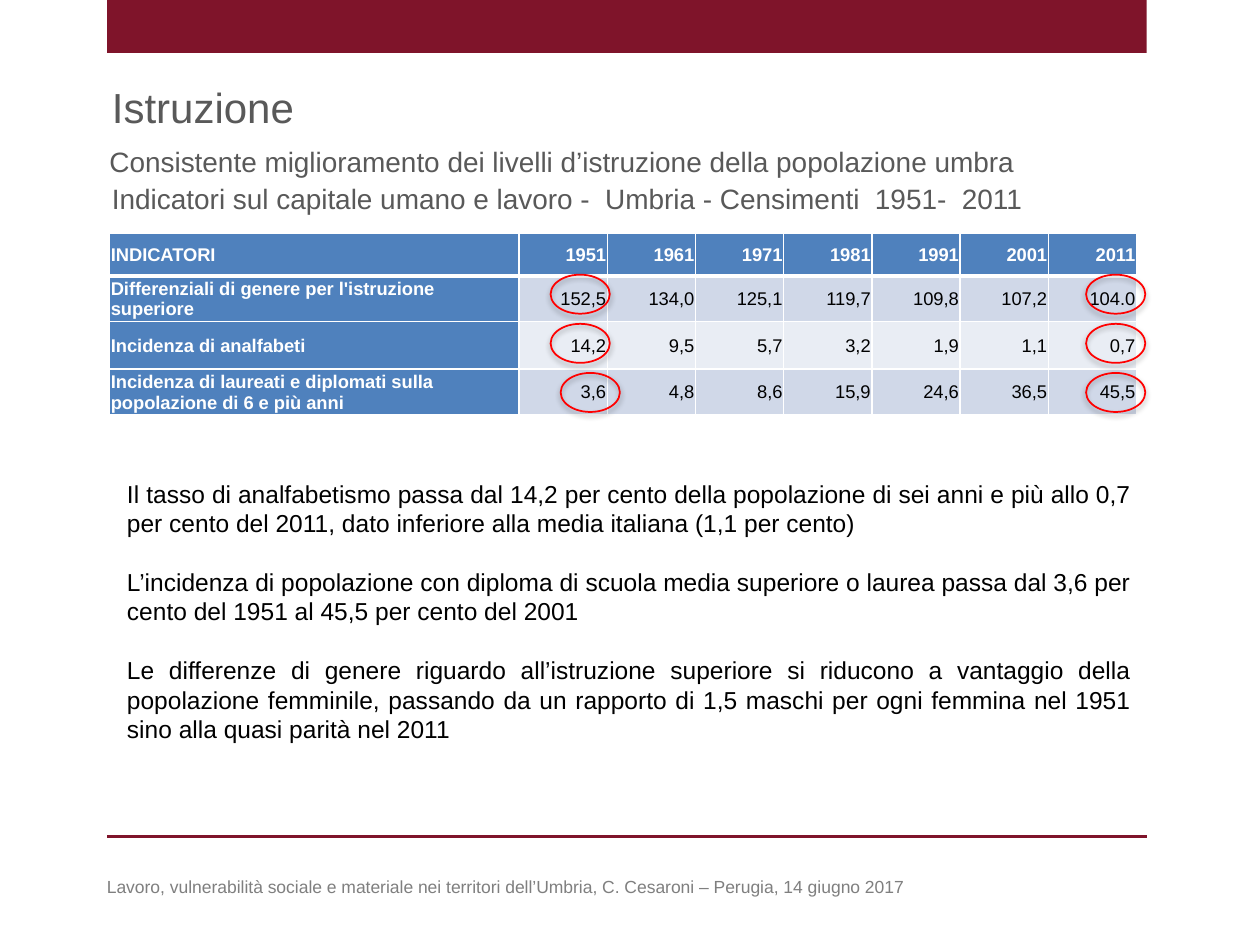
import pptx
import pptx.util
import pptx.dml.color
import pptx.enum.shapes
import pptx.enum.text
import pptx.oxml
import pptx.oxml.ns

Inches = pptx.util.Inches
Pt = pptx.util.Pt
ALIGN = pptx.enum.text.PP_ALIGN
SHAPE = pptx.enum.shapes.MSO_SHAPE

COLORS = {
    "burgundy": "7F142A", "heading": "595959", "footer": "7F7F7F",
    "black": "000000", "white": "FFFFFF", "header": "4F81BD",
    "band_dark": "D0D8E8", "band_light": "E9EDF4", "mark": "FF0000",
}
NAMESPACE = pptx.oxml.ns.nsdecls("a")

TABLE_ROWS = [
    ["INDICATORI", "1951", "1961", "1971", "1981", "1991", "2001", "2011"],
    ["Differenziali di genere per l'istruzione superiore",
     "152,5", "134,0", "125,1", "119,7", "109,8", "107,2", "104.0"],
    ["Incidenza di analfabeti", "14,2", "9,5", "5,7", "3,2", "1,9", "1,1", "0,7"],
    ["Incidenza di laureati e diplomati sulla popolazione di 6 e più anni",
     "3,6", "4,8", "8,6", "15,9", "24,6", "36,5", "45,5"],
]
ROW_HEIGHTS = [0.34, 0.36, 0.38, 0.35]
COLUMN_WIDTHS = [3.25] + [0.7] * 7

COMMENTS = [
    "Il tasso di analfabetismo passa dal 14,2 per cento della popolazione di sei anni "
    "e più allo 0,7 per cento del 2011, dato inferiore alla media italiana (1,1 per cento)",
    "L’incidenza di popolazione con diploma di scuola media superiore o laurea passa "
    "dal 3,6 per cento del 1951 al 45,5 per cento del 2001",
    "Le differenze di genere riguardo all’istruzione superiore si riducono a vantaggio "
    "della popolazione femminile, passando da un rapporto di 1,5 maschi per ogni femmina "
    "nel 1951 sino alla quasi parità nel 2011",
]


def color(name):
    return pptx.dml.color.RGBColor.from_string(COLORS[name])


def style_paragraph(para, size, color_name, bold=False, align=ALIGN.LEFT):
    para.alignment = align
    para.font.name = "Arial"
    para.font.size = Pt(size)
    para.font.bold = bold
    para.font.color.rgb = color(color_name)


def add_text(page, left, top, width, height, texts, size, color_name,
             align=ALIGN.LEFT, gap=0):
    box = page.shapes.add_textbox(Inches(left), Inches(top), Inches(width), Inches(height))
    frame = box.text_frame
    frame.word_wrap = True
    for index, text in enumerate(texts):
        para = frame.paragraphs[0] if index == 0 else frame.add_paragraph()
        para.text = text
        para.space_before = Pt(gap if index else 0)
        style_paragraph(para, size, color_name, align=align)


def add_frame(page, left, width):
    # Top band and footer rule
    band = page.shapes.add_shape(SHAPE.RECTANGLE, Inches(left), 0, Inches(width), Inches(0.42))
    band.shadow.inherit = False
    band.fill.solid()
    band.fill.fore_color.rgb = color("burgundy")
    band.line.fill.background()
    rule = page.shapes.add_connector(
        pptx.enum.shapes.MSO_CONNECTOR.STRAIGHT,
        Inches(left), Inches(6.64), Inches(left + width), Inches(6.64))
    rule.line.color.rgb = color("burgundy")
    rule.line.width = Pt(2)
    rule._element.spPr.append(pptx.oxml.parse_xml(f"<a:effectLst {NAMESPACE}/>"))


def add_headings(page, left, top):
    add_text(page, left, top, 8.24, 0.5, ["Istruzione"], 24, "heading")
    add_text(page, left - 0.02, top + 0.5, 8.29, 0.37,
             ["Consistente miglioramento dei livelli d’istruzione della popolazione umbra"],
             16, "heading")
    add_text(page, left, top + 0.79, 8.29, 0.37,
             ["Indicatori sul capitale umano e lavoro -  Umbria - Censimenti  1951-  2011"],
             16, "heading")


def set_borders(cell, bottom_width):
    properties = cell._tc.get_or_add_tcPr()
    widths = {"lnL": 1, "lnR": 1, "lnT": 1, "lnB": bottom_width}
    for index, (side, width) in enumerate(widths.items()):
        properties.insert(index, pptx.oxml.parse_xml(
            f'<a:{side} {NAMESPACE} w="{Pt(width)}"><a:solidFill>'
            f'<a:srgbClr val="{COLORS["white"]}"/></a:solidFill></a:{side}>'))


def add_indicator_table(page, left, top):
    table = page.shapes.add_table(
        len(TABLE_ROWS), len(COLUMN_WIDTHS), Inches(left), Inches(top),
        Inches(sum(COLUMN_WIDTHS)), Inches(sum(ROW_HEIGHTS))).table
    for column, width in zip(table.columns, COLUMN_WIDTHS):
        column.width = Inches(width)
    for row_index, values in enumerate(TABLE_ROWS):
        table.rows[row_index].height = Inches(ROW_HEIGHTS[row_index])
        band = "band_dark" if row_index % 2 else "band_light"
        for column_index, value in enumerate(values):
            cell = table.cell(row_index, column_index)
            heading = row_index == 0 or column_index == 0
            cell.text = value
            cell.vertical_anchor = pptx.enum.text.MSO_ANCHOR.MIDDLE
            cell.margin_left = cell.margin_right = cell.margin_top = Inches(0.01)
            cell.margin_bottom = 0
            cell.fill.solid()
            cell.fill.fore_color.rgb = color("header" if heading else band)
            style_paragraph(cell.text_frame.paragraphs[0], 10.5,
                            "white" if heading else "black", heading,
                            ALIGN.RIGHT if column_index else ALIGN.LEFT)
            set_borders(cell, 1 if row_index else 3)


def add_mark(page, left, top):
    mark = page.shapes.add_shape(SHAPE.OVAL, Inches(left), Inches(top), Inches(0.47), Inches(0.31))
    mark.fill.background()
    mark.line.color.rgb = color("mark")
    mark.line.width = Pt(1)
    mark._element.spPr.append(pptx.oxml.parse_xml(
        f'<a:effectLst {NAMESPACE}><a:outerShdw blurRad="{Pt(3.1)}" dist="{Pt(1.8)}" '
        f'dir="5400000" rotWithShape="0"><a:srgbClr val="{COLORS["black"]}">'
        f'<a:alpha val="35000"/></a:srgbClr></a:outerShdw></a:effectLst>'))


def add_marks(page, top):
    # First and last census of each indicator
    for index, first_left in enumerate([4.37, 4.37, 4.45]):
        for left in (first_left, 8.62):
            add_mark(page, left, top + index * 0.39)


def main():
    deck = pptx.Presentation()
    deck.slide_width, deck.slide_height = Inches(10), Inches(7.5)
    page = deck.slides.add_slide(deck.slide_layouts[6])
    add_frame(page, 0.85, 8.25)
    add_headings(page, 0.79, 0.6)
    add_indicator_table(page, 0.87, 1.85)
    add_marks(page, 2.18)
    # Comments and footer
    add_text(page, 0.91, 3.75, 8.17, 2.22, COMMENTS, 14, "black", ALIGN.JUSTIFY, gap=16.8)
    add_text(page, 0.75, 6.9, 6.7, 0.27,
             ["Lavoro, vulnerabilità sociale e materiale nei territori dell’Umbria, "
              "C. Cesaroni – Perugia, 14 giugno 2017"], 10, "footer")
    deck.save("out.pptx")


if __name__ == "__main__":
    main()
